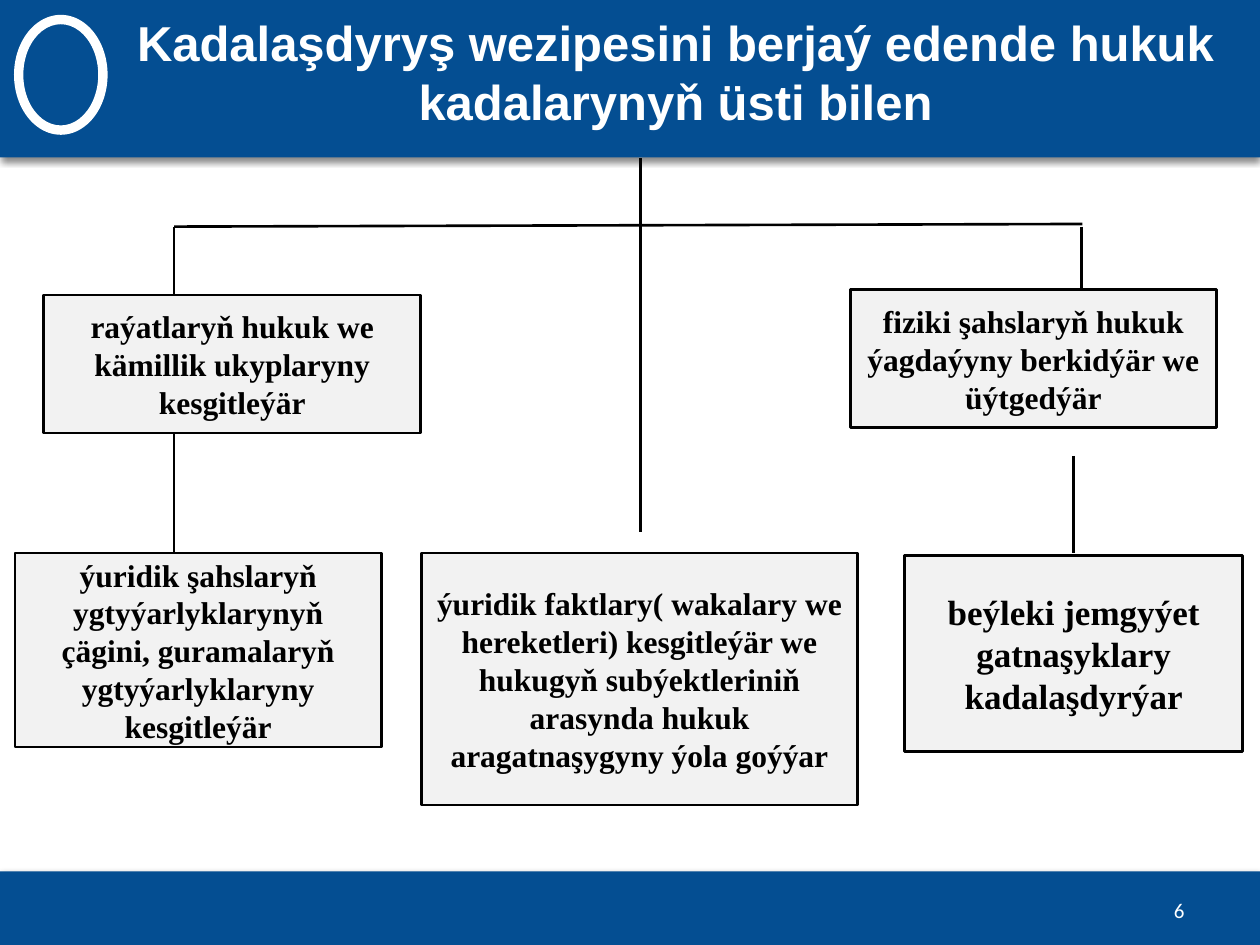
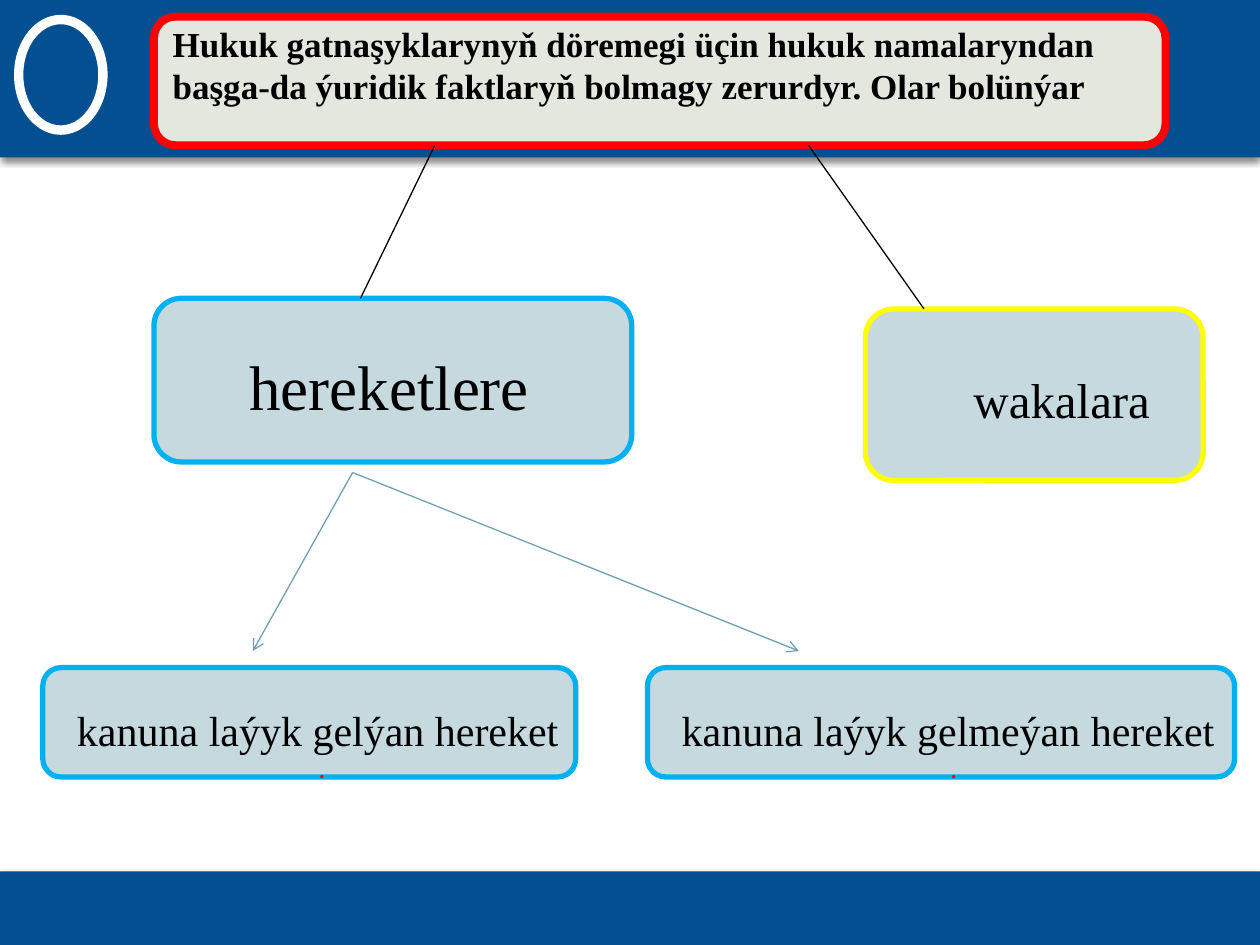
from dataclasses import dataclass

from lxml import etree
from pptx import Presentation
from pptx.dml.color import RGBColor
from pptx.enum import shapes, text
from pptx.oxml import ns
from pptx.util import Pt


@dataclass(frozen=True)
class Theme:
    band: str = "044E92"
    white: str = "FFFFFF"
    ink: str = "000000"
    red: str = "FF0000"
    sky: str = "00B0F0"
    yellow: str = "FFFF00"
    arrow: str = "6EA0B0"
    norm_fill: str = "F2F2F2"
    heading_fill: str = "E3E7DE"
    fact_fill: str = "C5D9DF"
    title_font: str = "Arial"
    text_font: str = "Times New Roman"
    number_font: str = "Calibri"
    title_size: float = 28
    body_size: float = 18
    lead_size: float = 20
    action_size: float = 24
    event_size: float = 28
    deed_size: float = 36
    small_size: float = 12


THEME = Theme()
SHAPE = shapes.MSO_SHAPE
ALIGN = text.PP_ALIGN
ANCHOR = text.MSO_ANCHOR


@dataclass(frozen=True)
class Box:
    left: float
    top: float
    width: float
    height: float

    def lengths(self) -> tuple:
        return Pt(self.left), Pt(self.top), Pt(self.width), Pt(self.height)


@dataclass(frozen=True)
class Line:
    text: str
    size: float
    bold: bool = False
    color: str = THEME.ink
    font: str = THEME.text_font
    align: ALIGN = ALIGN.LEFT
    spacing: float = 1.0
    before: float = 0


@dataclass(frozen=True)
class Node:
    """A filled, outlined shape with its lines of text."""
    box: Box
    lines: tuple
    fill: str = THEME.fact_fill
    outline: str = THEME.sky
    weight: float = 3
    kind: SHAPE = SHAPE.ROUNDED_RECTANGLE
    anchor: ANCHOR = ANCHOR.MIDDLE
    insets: tuple = (7.2, 3.6, 7.2, 3.6)


@dataclass(frozen=True)
class Link:
    start: tuple
    end: tuple
    color: str = THEME.ink
    weight: float = 1.5
    arrow: bool = False


def write(frame, lines: tuple, anchor: ANCHOR = ANCHOR.MIDDLE,
          insets: tuple = (7.2, 3.6, 7.2, 3.6)) -> None:
    frame.word_wrap = True
    frame.auto_size = text.MSO_AUTO_SIZE.NONE
    frame.vertical_anchor = anchor
    (frame.margin_left, frame.margin_top,
     frame.margin_right, frame.margin_bottom) = map(Pt, insets)
    for index, line in enumerate(lines):
        paragraph = frame.add_paragraph() if index else frame.paragraphs[0]
        paragraph.text = line.text
        paragraph.alignment = line.align
        paragraph.line_spacing = line.spacing
        if index:
            paragraph.space_before = Pt(line.before)
        font = paragraph.font
        font.name, font.size, font.bold = line.font, Pt(line.size), line.bold
        font.color.rgb = RGBColor.from_string(line.color)


def add_filled(slide, kind: SHAPE, box: Box, fill: str):
    shape = slide.shapes.add_shape(kind, *box.lengths())
    shape.shadow.inherit = False
    shape.fill.solid()
    shape.fill.fore_color.rgb = RGBColor.from_string(fill)
    shape.line.fill.background()
    return shape


def add_node(slide, node: Node) -> None:
    shape = add_filled(slide, node.kind, node.box, node.fill)
    shape.line.color.rgb = RGBColor.from_string(node.outline)
    shape.line.width = Pt(node.weight)
    write(shape.text_frame, node.lines, node.anchor, node.insets)


def add_link(slide, link: Link) -> None:
    connector = slide.shapes.add_connector(
        shapes.MSO_CONNECTOR.STRAIGHT, *map(Pt, link.start + link.end))
    connector.line.color.rgb = RGBColor.from_string(link.color)
    connector.line.width = Pt(link.weight)
    properties = connector.element.spPr
    if link.arrow:
        etree.SubElement(properties.find(ns.qn("a:ln")), ns.qn("a:tailEnd"), type="arrow")
    etree.SubElement(properties, ns.qn("a:effectLst"))


def add_band_shadow(band) -> None:
    effects = band.element.spPr.find(ns.qn("a:effectLst"))
    shadow = etree.SubElement(
        effects, ns.qn("a:outerShdw"), blurRad=str(Pt(4)), dist=str(Pt(2)),
        dir="5400000", rotWithShape="0")
    color = etree.SubElement(shadow, ns.qn("a:srgbClr"), val=THEME.ink)
    etree.SubElement(color, ns.qn("a:alpha"), val="45000")


def furnish_master(presentation, slide) -> None:
    """Draw the bands and the ring, then move them behind the master's placeholders."""
    footer = add_filled(slide, SHAPE.RECTANGLE, Box(0, 498, 720, 42), THEME.band)
    header = add_filled(slide, SHAPE.RECTANGLE, Box(0, 0, 720, 90), THEME.band)
    ring = add_filled(slide, SHAPE.DONUT, Box(8, 8.5, 53.5, 68.5), THEME.white)
    ring.adjustments[0] = 0.1
    for band in (footer, header):
        add_band_shadow(band)
    tree = presentation.slide_master.shapes.element
    for position, shape in enumerate((footer, header, ring), start=2):
        tree.insert(position, shape.element)


def norm(box: Box, wording: str, size: float = THEME.body_size) -> Node:
    line = Line(wording, size, bold=True, align=ALIGN.CENTER)
    return Node(box, (line,), THEME.norm_fill, THEME.ink, 1.5, SHAPE.RECTANGLE)


def action(left: float, width: float, wording: str) -> Node:
    lines = (Line(wording, THEME.action_size),
             Line(".", THEME.small_size, True, THEME.red, align=ALIGN.CENTER, before=1.5))
    return Node(Box(left, 381.5, width, 62.5), lines,
                anchor=ANCHOR.TOP, insets=(16.5, 18, 2, 0))


NORM_LINKS = (
    Link((366, 130.5), (366, 304)),
    Link((99.5, 129.5), (618.5, 128)),
    Link((618, 129.5), (618, 169)),
    Link((99.5, 129.5), (99.5, 169)),
    Link((613.5, 260.5), (613.5, 316)),
    Link((99.5, 235.5), (99.5, 317.5)),
    Link((366, 90.5), (366, 130.5)),
)
NORMS = (
    norm(Box(486, 165.5, 209, 79), "fiziki şahslaryň hukuk ýagdaýyny berkidýär we üýtgedýär"),
    norm(Box(517, 317.5, 193, 112), "beýleki jemgyýet gatnaşyklary kadalaşdyrýar",
         THEME.lead_size),
    norm(Box(8.5, 316, 209.5, 111),
         "ýuridik şahslaryň ygtyýarlyklarynyň çägini, guramalaryň ygtyýarlyklaryny kesgitleýär"),
    norm(Box(25, 168.5, 215.5, 79), "raýatlaryň hukuk we kämillik ukyplaryny kesgitleýär"),
    norm(Box(241, 316, 249, 144),
         "ýuridik faktlary( wakalary we hereketleri) kesgitleýär we hukugyň "
         "subýektleriniň arasynda hukuk aragatnaşygyny ýola goýýar"),
)

FACTS = (
    Node(Box(88, 9.5, 578, 73.5),
         (Line("Hukuk gatnaşyklarynyň döremegi üçin hukuk namalaryndan", THEME.lead_size, True),
          Line("başga-da ýuridik faktlaryň bolmagy zerurdyr. Olar bolünýar",
               THEME.lead_size, True)),
         THEME.heading_fill, THEME.red, 4.5, SHAPE.FLOWCHART_ALTERNATE_PROCESS,
         ANCHOR.TOP, (7.2, 0, 7.2, 0)),
    Node(Box(88, 170.5, 273, 93.5), (Line("hereketlere", THEME.deed_size, spacing=1.15),),
         insets=(50, 3.6, 7.2, 3.6)),
    Node(Box(494.5, 176.5, 193, 98), (Line("wakalara", THEME.event_size, spacing=1.15),),
         outline=THEME.yellow, insets=(57, 3.6, 7.2, 3.6)),
    action(24.5, 304.5, "kanuna laýyk gelýan hereket"),
    action(370, 335.5, "kanuna laýyk gelmeýan hereket"),
)
FORK = (201.5, 270)
FACT_LINKS = (
    Link((248.5, 83), (206, 170.5), weight=0.75),
    Link((528, 176.5), (462, 83), weight=0.75),
    Link(FORK, (144.5, 372), THEME.arrow, 0.75, True),
    Link(FORK, (456.5, 372), THEME.arrow, 0.75, True),
)


def build_norms_slide(slide) -> None:
    title = slide.shapes.title
    title.left, title.top, title.width, title.height = Box(64, 3, 644, 76).lengths()
    write(title.text_frame, (
        Line("Kadalaşdyryş wezipesini berjaý edende hukuk kadalarynyň üsti bilen",
             THEME.title_size, True, THEME.white, THEME.title_font, ALIGN.CENTER),))
    number = slide.shapes.add_textbox(*Box(624, 505.5, 60, 29).lengths())
    write(number.text_frame, (
        Line("6", THEME.small_size, False, THEME.white, THEME.number_font, ALIGN.RIGHT),))
    for link in NORM_LINKS:
        add_link(slide, link)
    for node in NORMS:
        add_node(slide, node)


def build_facts_slide(slide) -> None:
    for node in FACTS:
        add_node(slide, node)
    for link in FACT_LINKS:
        add_link(slide, link)


def main() -> None:
    presentation = Presentation()
    presentation.slide_width, presentation.slide_height = Pt(720), Pt(540)
    title_only, blank = presentation.slide_layouts[5], presentation.slide_layouts[6]
    norms_slide = presentation.slides.add_slide(title_only)
    furnish_master(presentation, norms_slide)
    build_norms_slide(norms_slide)
    build_facts_slide(presentation.slides.add_slide(blank))
    presentation.save("out.pptx")


if __name__ == "__main__":
    main()
